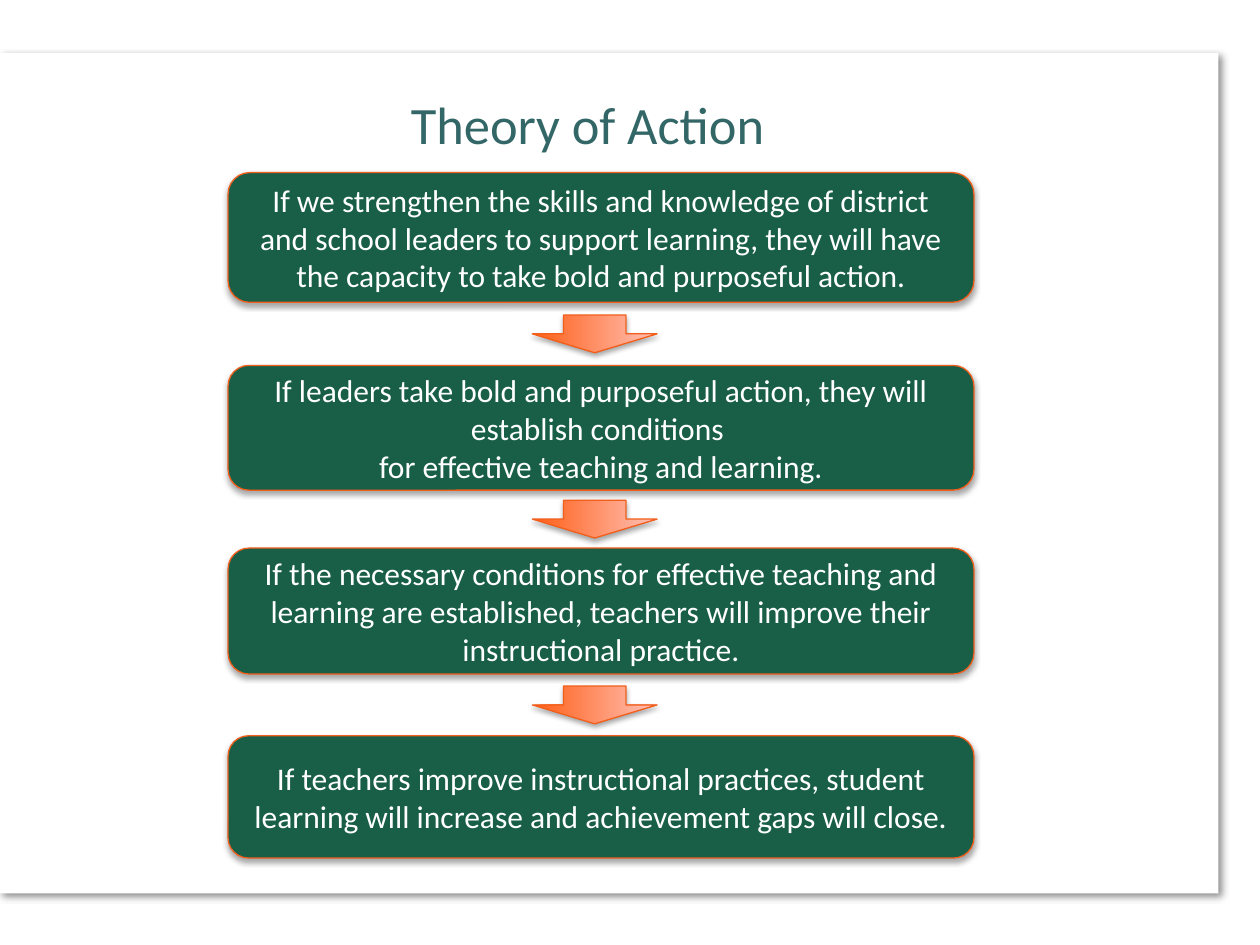
from dataclasses import dataclass

from lxml import etree
from pptx import Presentation
from pptx.dml.color import RGBColor
from pptx.enum.shapes import MSO_SHAPE
from pptx.enum.text import MSO_ANCHOR, MSO_AUTO_SIZE, PP_ALIGN
from pptx.oxml.ns import qn
from pptx.util import Inches, Pt

RECTANGLE = MSO_SHAPE.RECTANGLE
ROUNDED = MSO_SHAPE.ROUNDED_RECTANGLE
ARROW = MSO_SHAPE.RIGHT_ARROW
CENTER = PP_ALIGN.CENTER
MIDDLE, BOTTOM = MSO_ANCHOR.MIDDLE, MSO_ANCHOR.BOTTOM
NO_AUTOFIT = MSO_AUTO_SIZE.NONE
TITLE_ONLY = 5


@dataclass(frozen=True)
class Theme:
    """Colours, type sizes and shadows of the slide."""
    font: str = "Calibri"
    title_size: int = 30
    step_size: int = 18
    title: str = "336666"
    paper: str = "FFFFFF"
    step: str = "195F47"
    outline: str = "F25F1C"
    arrow_start: str = "FF5E15"
    arrow_end: str = "FFC1B7"
    outline_width: float = 0.75
    step_shadow: tuple = (35, 3.1, 1.8, 90)
    page_shadow: tuple = (43, 4, 3, 45)


THEME = Theme()
WIDTH, HEIGHT = 10, 7.5
STEP_LEFT, STEP_WIDTH = 1.81, 5.92
ARROW_CENTER, ARROW_LENGTH, ARROW_BREADTH = 4.72, 0.3, 0.99
STEPS = [
    (1.37, 1.03, "If we strengthen the skills and knowledge of district and school leaders "
                 "to support learning, they will have the capacity to take bold and "
                 "purposeful action."),
    (2.9, 0.99, "If leaders take bold and purposeful action, they will establish conditions \n"
                "for effective teaching and learning."),
    (4.35, 1, "If the necessary conditions for effective teaching and learning are "
              "established, teachers will improve their instructional practice."),
    (5.84, 0.97, "If teachers improve instructional practices, student learning will "
                 "increase and achievement gaps will close."),
]


def rgb(value):
    """Return a colour from its hex digits."""
    return RGBColor.from_string(value)


def write(holder, text, *, size, color, anchor, margin=0.05):
    """Write one centred paragraph into a shape or placeholder."""
    frame = holder.text_frame
    frame.word_wrap = True
    frame.auto_size = NO_AUTOFIT
    frame.vertical_anchor = anchor
    frame.margin_top = frame.margin_bottom = Inches(margin)
    frame.margin_left = frame.margin_right = Inches(0.09)
    paragraph = frame.paragraphs[0]
    paragraph.text = text
    paragraph.alignment = CENTER
    for run in paragraph.runs:
        run.font.name = THEME.font
        run.font.size = Pt(size)
        run.font.color.rgb = rgb(color)


def cast_shadow(shape, opacity, blur, distance, angle):
    """Give a shape a black outer shadow."""
    shape.shadow.inherit = False
    effects = shape._element.spPr.find(qn("a:effectLst"))
    outer = etree.SubElement(effects, qn("a:outerShdw"), {
        "blurRad": str(Pt(blur)), "dist": str(Pt(distance)),
        "dir": str(angle * 60000), "rotWithShape": "0"})
    black = etree.SubElement(outer, qn("a:srgbClr"), val="000000")
    etree.SubElement(black, qn("a:alpha"), val=str(opacity * 1000))


def add_page(slide):
    """Lay the shadowed white page behind everything else."""
    page = slide.shapes.add_shape(RECTANGLE, 0, Inches(0.42), Inches(9.67), Inches(6.67))
    page.fill.solid()
    page.fill.fore_color.rgb = rgb(THEME.paper)
    page.line.fill.background()
    cast_shadow(page, *THEME.page_shadow)
    page._element.getparent().insert(2, page._element)


def set_title(slide, text):
    """Place and fill the title placeholder."""
    title = slide.shapes.title
    title.left, title.top = Inches(0.83), Inches(0.75)
    title.width, title.height = Inches(7.67), Inches(0.5)
    write(title, text, size=THEME.title_size, color=THEME.title, anchor=BOTTOM, margin=0.02)


def add_outlined(slide, kind, left, top, width, height):
    """Add a shape with the orange outline and soft shadow."""
    shape = slide.shapes.add_shape(kind, Inches(left), Inches(top), Inches(width), Inches(height))
    shape.line.color.rgb = rgb(THEME.outline)
    shape.line.width = Pt(THEME.outline_width)
    cast_shadow(shape, *THEME.step_shadow)
    return shape


def add_step(slide, top, height, text):
    """Add one statement of the chain."""
    step = add_outlined(slide, ROUNDED, STEP_LEFT, top, STEP_WIDTH, height)
    step.fill.solid()
    step.fill.fore_color.rgb = rgb(THEME.step)
    write(step, text, size=THEME.step_size, color=THEME.paper, anchor=MIDDLE)


def add_down_arrow(slide, middle):
    """Add a downward arrow centred on the given height."""
    arrow = add_outlined(slide, ARROW, ARROW_CENTER - ARROW_LENGTH / 2,
                         middle - ARROW_BREADTH / 2, ARROW_LENGTH, ARROW_BREADTH)
    arrow.rotation = 90
    arrow.fill.gradient()
    arrow.fill.gradient_angle = 90
    for stop, position, color in zip(arrow.fill.gradient_stops, (0, 1),
                                     (THEME.arrow_start, THEME.arrow_end)):
        stop.position = position
        stop.color.rgb = rgb(color)


def main():
    """Build and save the slide."""
    deck = Presentation()
    deck.slide_width, deck.slide_height = Inches(WIDTH), Inches(HEIGHT)
    slide = deck.slides.add_slide(deck.slide_layouts[TITLE_ONLY])
    add_page(slide)
    set_title(slide, "Theory of Action")
    for top, height, text in STEPS:
        add_step(slide, top, height, text)
    for (top, height, _), (next_top, _, _) in zip(STEPS, STEPS[1:]):
        add_down_arrow(slide, (top + height + next_top) / 2)
    deck.save("out.pptx")


if __name__ == "__main__":
    main()
